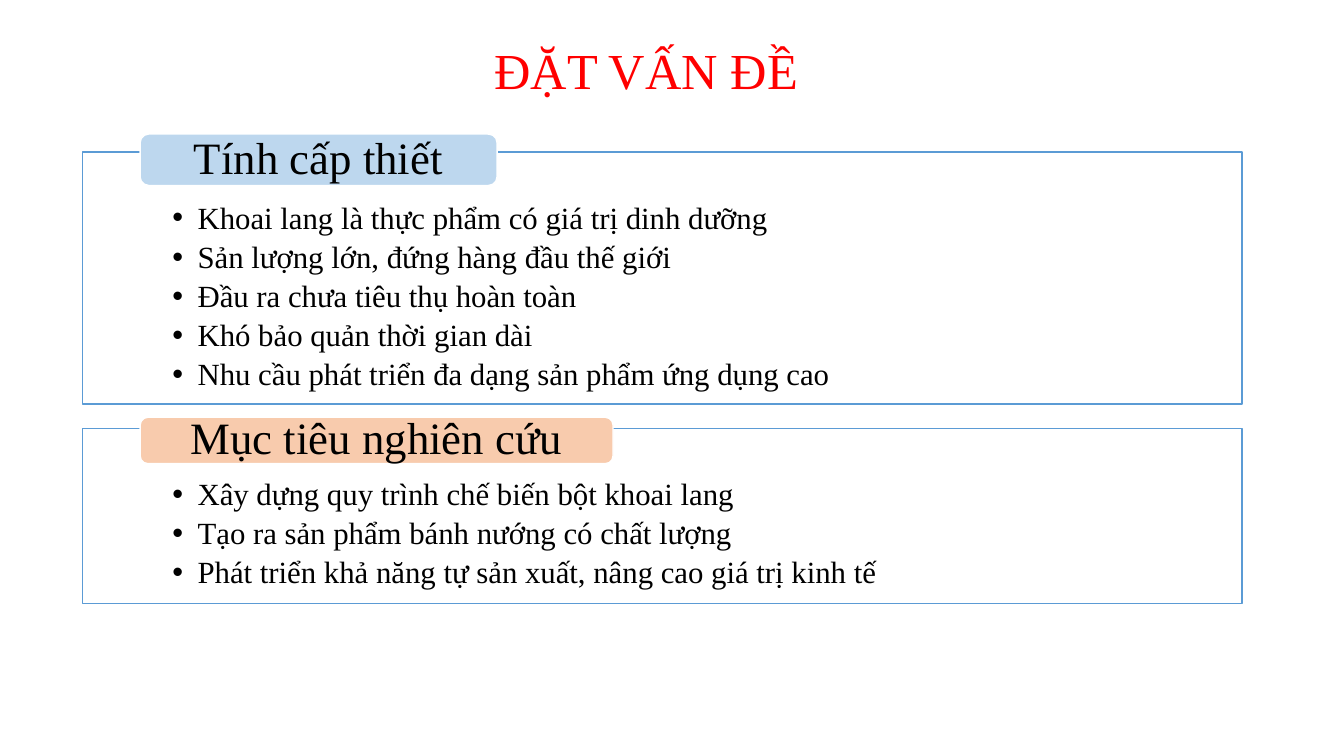
import pptx
import pptx.dml.color
import pptx.enum.shapes
import pptx.enum.text
import pptx.oxml.ns
import pptx.util
from lxml import etree

PX = 9144  # EMU per px, 100 px to the inch
FONT = "Times New Roman"
COLORS = {
    "title": "FF0000",
    "text": "000000",
    "white": "FFFFFF",
    "border": "5B9BD5",
    "blue": "BDD7EE",
    "orange": "F8CBAD",
}
PANEL_LEFT, PANEL_WIDTH = 82, 1150
TAB_LEFT = 139
# heading, tab colour, tab (top, width, height), panel (top, height), bullets
SECTIONS = [
    ("Tính cấp thiết", "blue", (133, 354, 51), (151, 250), [
        "Khoai lang là thực phẩm có giá trị dinh dưỡng",
        "Sản lượng lớn, đứng hàng đầu thế giới",
        "Đầu ra chưa tiêu thụ hoàn toàn",
        "Khó bảo quản thời gian dài",
        "Nhu cầu phát triển đa dạng sản phẩm ứng dụng cao",
    ]),
    ("Mục tiêu nghiên cứu", "orange", (414, 469, 46), (425, 174), [
        "Xây dựng quy trình chế biến bột khoai lang",
        "Tạo ra sản phẩm bánh nướng có chất lượng",
        "Phát triển khả năng tự sản xuất, nâng cao giá trị kinh tế",
    ]),
]


def rgb(name):
    return pptx.dml.color.RGBColor.from_string(COLORS[name])


def px(*lengths):
    return [pptx.util.Emu(n * PX) for n in lengths]


def set_frame(tf, insets, anchor):
    """Insets run left, top, right, bottom."""
    tf.word_wrap = True
    tf.margin_left, tf.margin_top, tf.margin_right, tf.margin_bottom = px(*insets)
    tf.vertical_anchor = anchor


def set_paragraph(p, text, size, color, align):
    p.text = text
    p.alignment = align
    p.line_spacing = 0.9
    p.font.name = FONT
    p.font.size = pptx.util.Pt(size)
    p.font.color.rgb = rgb(color)


def add_bullet(p):
    pPr = p._p.get_or_add_pPr()
    pPr.set("marL", str(25 * PX))
    pPr.set("indent", str(-25 * PX))
    bullet_font = etree.Element(pptx.oxml.ns.qn("a:buFont"), typeface="Arial")
    bullet = etree.Element(pptx.oxml.ns.qn("a:buChar"), char="•")
    pPr.insert_element_before(bullet_font, "a:buChar", "a:tabLst", "a:defRPr", "a:extLst")
    pPr.insert_element_before(bullet, "a:tabLst", "a:defRPr", "a:extLst")


def add_box(slide, kind, box, fill, line):
    sp = slide.shapes.add_shape(kind, *px(*box))
    sp.shadow.inherit = False
    sp.fill.solid()
    sp.fill.fore_color.rgb = rgb(fill)
    sp.line.color.rgb = rgb(line)
    sp.line.width = pptx.util.Pt(1)
    return sp


def add_title(slide, text):
    tf = slide.shapes.add_textbox(*px(169, 17, 944, 112)).text_frame
    set_frame(tf, (10, 5, 10, 5), pptx.enum.text.MSO_ANCHOR.MIDDLE)
    set_paragraph(tf.paragraphs[0], text, 36, "title", pptx.enum.text.PP_ALIGN.CENTER)


def add_panel(slide, top, height, bullets):
    sp = add_box(slide, pptx.enum.shapes.MSO_SHAPE.RECTANGLE,
                 (PANEL_LEFT, top, PANEL_WIDTH, height), "white", "border")
    tf = sp.text_frame
    set_frame(tf, (89, 50, 89, 17), pptx.enum.text.MSO_ANCHOR.TOP)
    for i, text in enumerate(bullets):
        p = tf.add_paragraph() if i else tf.paragraphs[0]
        set_paragraph(p, text, 22, "text", pptx.enum.text.PP_ALIGN.LEFT)
        p.space_after = pptx.util.Pt(4.2)
        add_bullet(p)


def add_tab(slide, top, width, height, text, fill):
    sp = add_box(slide, pptx.enum.shapes.MSO_SHAPE.ROUNDED_RECTANGLE,
                 (TAB_LEFT, top, width, height), fill, "white")
    tf = sp.text_frame
    set_frame(tf, (33, 0, 33, 0), pptx.enum.text.MSO_ANCHOR.MIDDLE)
    set_paragraph(tf.paragraphs[0], text, 32, "text", pptx.enum.text.PP_ALIGN.CENTER)


def main():
    prs = pptx.Presentation()
    prs.slide_width, prs.slide_height = px(1333, 750)
    slide = prs.slides.add_slide(prs.slide_layouts[6])
    add_title(slide, "ĐẶT VẤN ĐỀ")
    for heading, color, tab, panel, bullets in SECTIONS:
        add_panel(slide, *panel, bullets)
        add_tab(slide, *tab, heading, color)
    prs.save("out.pptx")


if __name__ == "__main__":
    main()
